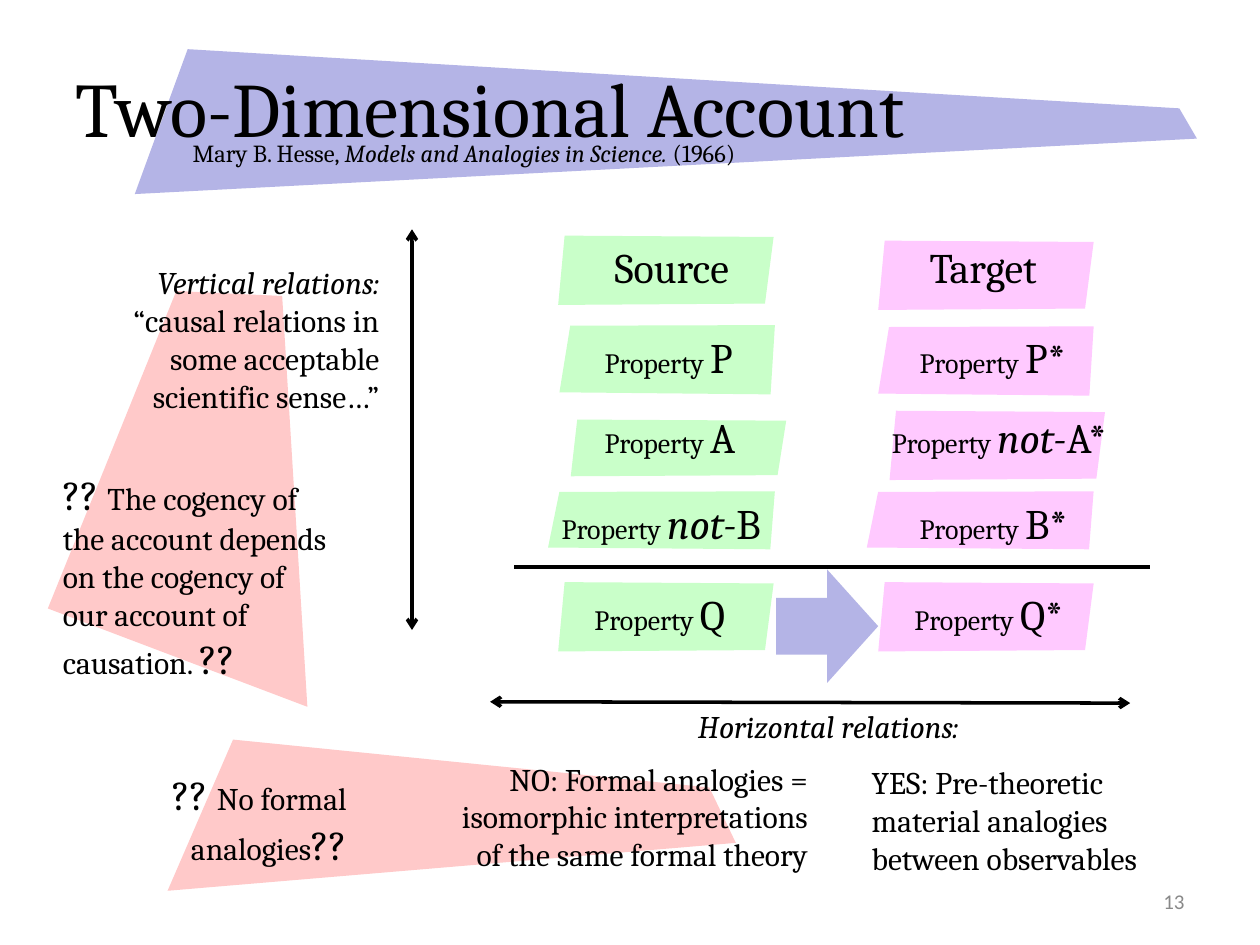
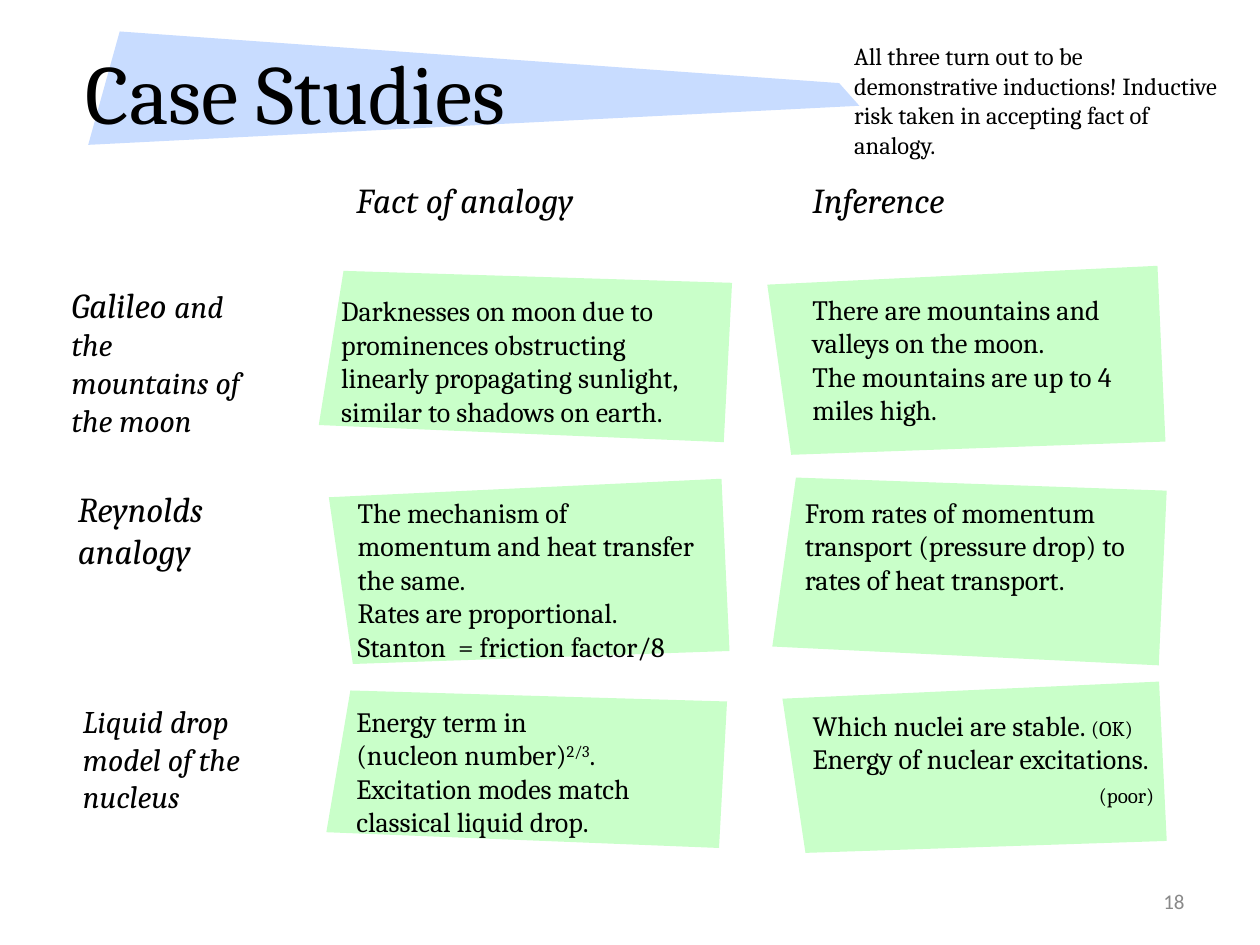
from lxml import etree
from pptx import Presentation
from pptx.dml.color import RGBColor
from pptx.enum.shapes import MSO_CONNECTOR, MSO_SHAPE
from pptx.enum.text import MSO_ANCHOR, MSO_AUTO_SIZE, PP_ALIGN
from pptx.oxml.ns import qn
from pptx.util import Inches, Pt

LEFT, RIGHT = PP_ALIGN.LEFT, PP_ALIGN.RIGHT
MIDDLE, TOP = MSO_ANCHOR.MIDDLE, MSO_ANCHOR.TOP
FIT, NO_FIT = MSO_AUTO_SIZE.SHAPE_TO_FIT_TEXT, MSO_AUTO_SIZE.NONE
STRAIGHT, RIGHT_ARROW = MSO_CONNECTOR.STRAIGHT, MSO_SHAPE.RIGHT_ARROW


class Theme:
    font, footer_font = "Cambria", "Calibri"
    ink, grey = "000000", "898989"
    lilac, sky = "B4B4E6", "C8DCFF"
    green, pink, red = "C9FFC9", "FFC9FF", "FFC9C9"
    large, head, body, cell, note, small = 24, 20, 18, 16, 14, 12
    line = 2


BIG = {"size": Theme.large}
BIG_ITALIC = {"size": Theme.large, "italic": True}
ITALIC = {"italic": True}
MEDIUM = {"size": Theme.body}
SMALL = {"size": Theme.small}
SUPERSCRIPT = {"superscript": True}

# Panel outlines as fractions of the panel's width and height
LEANING = [(0.03, 0), (1, 0.02), (0.96, 0.98), (0, 1)]
TURNED = [(0.05, 0.01), (1, 0), (0.98, 1), (0, 0.97)]
TAPERED = [(0.06, 0), (1, 0.07), (0.98, 1), (0, 0.9)]
TAPERED_UP = [(x, 1 - y) for x, y in TAPERED]

# ---- Slide content: a text is a list of paragraphs, a paragraph a list of runs
ACCOUNT = {
    "title": "Two-Dimensional Account", "title_at": (0.5, 0.3, 8.76, 1.1),
    "title_size": 44, "number": "13", "band_color": Theme.lilac,
    "band": [(1.49, 0.39), (9.36, 0.86), (9.5, 1.1), (1.07, 1.54)],
}
DOUBT_WEDGES = [
    [(1.85, 5.87), (5.63, 6.25), (5.84, 6.69), (1.33, 7.07)],
    [(0.38, 4.83), (1.4, 2.31), (2.24, 2.35), (2.44, 5.61)],
]
# Column: colour, then per row: outline, panel box, label position, label runs
PROPERTY = "Property "
ANALOGY_COLUMNS = [
    (Theme.green, [
        (LEANING, (4.43, 1.87, 1.71, 0.55), (4.78, 1.87, 1.14), [("Source", BIG)]),
        (TURNED, (4.44, 2.58, 1.71, 0.55), (4.7, 2.58, 1.22), [PROPERTY, ("P", BIG)]),
        (LEANING, (4.53, 3.33, 1.71, 0.45), (4.7, 3.22, 1.27), [PROPERTY, ("A", BIG)]),
        (TURNED, (4.35, 3.9, 1.8, 0.46), (4.36, 3.9, 1.8),
         [PROPERTY, ("not-", BIG_ITALIC), ("B", BIG)]),
        (LEANING, (4.43, 4.62, 1.71, 0.55), (4.62, 4.62, 1.27), [PROPERTY, ("Q", BIG)]),
    ]),
    (Theme.pink, [
        (LEANING, (6.97, 1.91, 1.71, 0.55), (7.28, 1.87, 1.06), [("Target", BIG)]),
        (TURNED, (6.97, 2.59, 1.71, 0.55), (7.2, 2.58, 1.39), [PROPERTY, ("P*", BIG)]),
        (LEANING, (7.06, 3.26, 1.71, 0.55), (6.98, 3.22, 1.98),
         [PROPERTY, ("not-", BIG_ITALIC), ("A*", BIG)]),
        (TURNED, (6.88, 3.9, 1.8, 0.46), (7.2, 3.9, 1.42), [PROPERTY, ("B*", BIG)]),
        (LEANING, (6.97, 4.62, 1.71, 0.55), (7.16, 4.62, 1.44), [PROPERTY, ("Q*", BIG)]),
    ]),
]
LABEL_HEIGHT = 0.51
INFERENCE_ARROW = (6.16, 4.52, 0.81, 0.9)
# Lines: start, end, with arrowheads
ACCOUNT_LINES = [
    ((4.08, 4.5), (9.13, 4.5), False),
    ((3.27, 1.82), (3.27, 5), True),
    ((3.89, 5.57), (8.97, 5.58), True),
]
# Texts: box, size, alignment, paragraphs
ACCOUNT_TEXTS = [
    ((1.43, 1.05, 4.88, 0.34), Theme.note, LEFT,
     [["Mary B. Hesse, ", ("Models and Analogies in Science.", ITALIC), " (1966)"]]),
    ((1.22, 6.05, 1.63, 0.91), Theme.body, RIGHT,
     [[("?? ", BIG), "No formal analogies", ("??", BIG)]]),
    ((0.4, 3.67, 2.29, 1.82), Theme.body, LEFT,
     [[("?? ", BIG), "The cogency of the account depends on the cogency of our "
       "account of causation. ", ("??", BIG)]]),
    ((0.61, 2.04, 2.5, 1.31), Theme.body, RIGHT,
     [[("Vertical relations:", ITALIC)],
      ["“causal relations in some acceptable scientific sense…”"]]),
    ((5.44, 5.56, 2.58, 0.4), Theme.body, LEFT, [[("Horizontal relations:", ITALIC)]]),
    ((3.4, 5.98, 3.11, 1.01), Theme.body, RIGHT,
     [["NO: Formal analogies = isomorphic interpretations of the same formal theory"]]),
    ((6.82, 6.01, 2.76, 1.01), Theme.body, LEFT,
     [["YES: Pre-theoretic material analogies between observables"]]),
]

CASES = {
    "title": "Case Studies", "title_at": (0.58, 0.21, 5.07, 1.02),
    "title_size": 48, "number": "18", "band_color": Theme.sky,
    "band": [(0.95, 0.25), (6.66, 0.66), (6.82, 0.84), (0.7, 1.15)],
}
CASE_PANELS = [
    (TAPERED, (2.53, 2.15, 3.28, 1.36)), (TAPERED_UP, (6.09, 2.11, 3.16, 1.5)),
    (TAPERED_UP, (2.61, 3.8, 3.18, 1.47)), (TAPERED, (6.13, 3.79, 3.13, 1.49)),
    (TAPERED, (2.59, 5.48, 3.18, 1.25)), (TAPERED_UP, (6.21, 5.41, 3.05, 1.36)),
]
CASE_HEADINGS = [
    ((2.73, 1.37, 2.05, 0.44), "Fact of analogy"),
    ((6.35, 1.37, 1.33, 0.44), "Inference"),
]
CASE_TEXTS = [
    ((6.68, 0.28, 3.18, 0.81), Theme.note, LEFT,
     [["All three turn out to be demonstrative inductions! Inductive risk taken in "
       "accepting fact of analogy."]]),
    # Galileo
    ((0.47, 2.2, 1.64, 1.04), Theme.head, LEFT,
     [[("Galileo ", ITALIC), ("and the mountains of the moon", {**ITALIC, **MEDIUM})]]),
    ((2.61, 2.28, 3.06, 1.18), Theme.cell, LEFT,
     [["Darknesses on moon due to prominences obstructing linearly propagating "
       "sunlight, similar to shadows on earth."]]),
    ((6.35, 2.27, 2.9, 1.18), Theme.cell, LEFT,
     [["There are mountains and valleys on the moon."],
      ["The mountains are up to 4 miles high."]]),
    # Reynolds
    ((0.52, 3.82, 1.34, 0.77), Theme.head, LEFT, [[("Reynolds analogy", ITALIC)]]),
    ((2.74, 3.88, 2.92, 1.45), Theme.cell, LEFT,
     [["The mechanism of momentum and heat transfer the same."],
      ["Rates are proportional."], ["Stanton  = friction factor/8"]]),
    ((6.29, 3.88, 2.97, 0.91), Theme.cell, LEFT,
     [["From rates of momentum transport (pressure drop) to rates of heat transport."]]),
    # Liquid drop
    ((0.56, 5.52, 1.5, 1.01), Theme.body, LEFT,
     [[("Liquid drop model of the nucleus", ITALIC)]]),
    ((2.73, 5.54, 2.93, 1.18), Theme.cell, LEFT,
     [["Energy term in"], ["(nucleon number)", ("2/3", SUPERSCRIPT), "."],
      ["Excitation modes match classical liquid drop."]]),
    ((6.35, 5.57, 2.91, 0.91), Theme.cell, LEFT,
     [["Which nuclei are stable. ", ("(OK)", SMALL)],
      ["Energy of nuclear excitations."],
      (RIGHT, [" ", ("(poor)", SMALL)])]),
]


# ---- Drawing helpers
def inches(values):
    return [Inches(v) for v in values]


def paint(sp, color):
    sp.shadow.inherit = False
    sp.fill.solid()
    sp.fill.fore_color.rgb = RGBColor.from_string(color)
    sp.line.fill.background()


def add_outline(s, points, color):
    start, *rest = [inches(point) for point in points]
    builder = s.shapes.build_freeform(*start)
    builder.add_line_segments(rest, close=True)
    paint(builder.convert_to_shape(), color)


def add_panel(s, outline, box, color):
    x, y, w, h = box
    add_outline(s, [(x + fx * w, y + fy * h) for fx, fy in outline], color)


def add_run(p, run, size, font, color):
    text, changes = (run, {}) if isinstance(run, str) else run
    style = {"name": font, "size": size, "italic": False, **changes}
    raised = style.pop("superscript", False)
    style["size"] = Pt(style["size"])
    r = p.add_run()
    r.text = text
    for key, value in style.items():
        setattr(r.font, key, value)
    r.font.color.rgb = RGBColor.from_string(color)
    if raised:
        r._r.get_or_add_rPr().set("baseline", "30000")


def add_text(s, box, size, align, paragraphs, wrap=True, fit=FIT, anchor=TOP,
             font=Theme.font, color=Theme.ink):
    tf = s.shapes.add_textbox(*inches(box)).text_frame
    for key, value in {"word_wrap": wrap, "auto_size": fit, "vertical_anchor": anchor}.items():
        setattr(tf, key, value)
    for i, paragraph in enumerate(paragraphs):
        p = tf.add_paragraph() if i else tf.paragraphs[0]
        p.alignment, runs = paragraph if isinstance(paragraph, tuple) else (align, paragraph)
        for run in runs:
            add_run(p, run, size, font, color)


def add_line(s, start, end, arrows):
    cx = s.shapes.add_connector(STRAIGHT, *inches(start + end))
    cx.line.width = Pt(Theme.line)
    cx.line.color.rgb = RGBColor.from_string(Theme.ink)
    if arrows:
        for tag in ("a:headEnd", "a:tailEnd"):
            etree.SubElement(cx.line._get_or_add_ln(), qn(tag), type="arrow")
    etree.SubElement(cx._element.spPr, qn("a:effectLst"))


def add_frame(s, page):
    """Title band, title and page number."""
    add_outline(s, page["band"], page["band_color"])
    add_text(s, page["title_at"], page["title_size"], LEFT, [[page["title"]]],
             fit=NO_FIT, anchor=MIDDLE)
    add_text(s, (7.17, 6.95, 2.33, 0.4), Theme.small, RIGHT, [[page["number"]]],
             fit=NO_FIT, anchor=MIDDLE, font=Theme.footer_font, color=Theme.grey)


# ---- Slides
def build_account(s):
    for wedge in DOUBT_WEDGES:
        add_outline(s, wedge, Theme.red)
    add_frame(s, ACCOUNT)
    for color, rows in ANALOGY_COLUMNS:
        for outline, panel, label, runs in rows:
            add_panel(s, outline, panel, color)
            add_text(s, label + (LABEL_HEIGHT,), Theme.cell, LEFT, [runs], wrap=False)
    paint(s.shapes.add_shape(RIGHT_ARROW, *inches(INFERENCE_ARROW)), Theme.lilac)
    for line in ACCOUNT_LINES:
        add_line(s, *line)
    for text in ACCOUNT_TEXTS:
        add_text(s, *text)


def build_cases(s):
    add_frame(s, CASES)
    for outline, box in CASE_PANELS:
        add_panel(s, outline, box, Theme.green)
    for box, heading in CASE_HEADINGS:
        add_text(s, box, Theme.head, LEFT, [[(heading, ITALIC)]], wrap=False)
    for text in CASE_TEXTS:
        add_text(s, *text)


def main():
    prs = Presentation()
    prs.slide_width, prs.slide_height = Inches(10), Inches(7.5)
    for build in (build_account, build_cases):
        build(prs.slides.add_slide(prs.slide_layouts[6]))
    prs.save("out.pptx")


if __name__ == "__main__":
    main()
